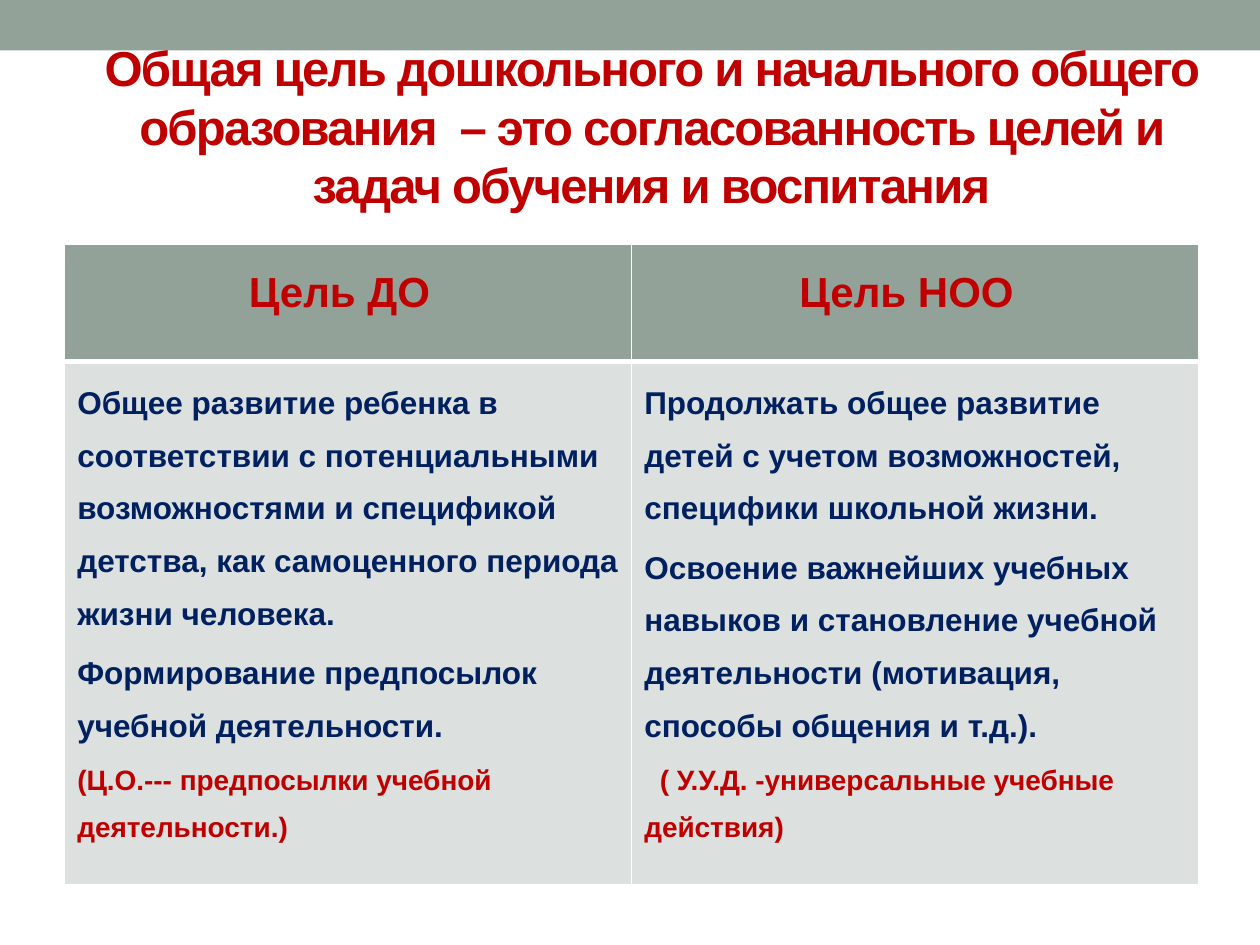
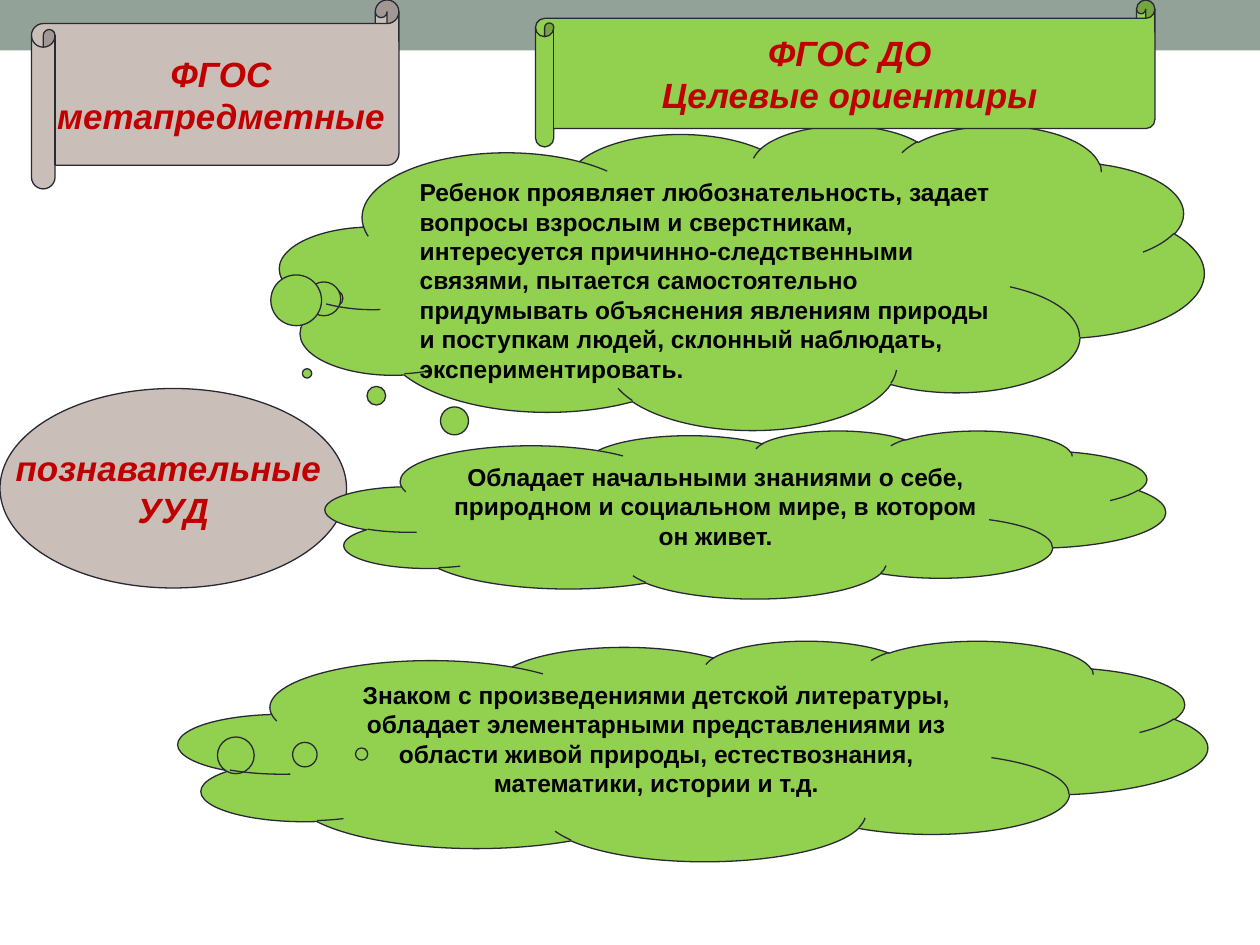
"""Build two slides on the goals of preschool and primary education."""
import lxml.etree
import pptx
import pptx.dml.color
import pptx.enum.shapes
import pptx.enum.text
import pptx.oxml.ns
import pptx.util

Pt = pptx.util.Pt
KIND = pptx.enum.shapes.MSO_SHAPE
ALIGN = pptx.enum.text.PP_ALIGN
ANCHOR = pptx.enum.text.MSO_ANCHOR
FONT = "Arial"
COLORS = {
    "sage": "93A299", "pale": "DCE0DE", "white": "FFFFFF", "red": "C00000",
    "navy": "002060", "lime": "92D050", "stone": "CABFB8", "ink": "292934",
    "black": "000000",
}

TITLE = ("Общая цель дошкольного и начального общего образования  – "
         "это согласованность целей и задач обучения и воспитания")
HEADS = ["Цель ДО", "Цель НОО"]
GOALS = [
    ["Общее развитие ребенка в соответствии с потенциальными возможностями "
     "и спецификой детства, как самоценного периода жизни человека.",
     "Формирование предпосылок учебной деятельности.",
     "(Ц.О.--- предпосылки учебной деятельности.)"],
    ["Продолжать общее развитие детей с учетом возможностей, специфики "
     "школьной жизни.",
     "Освоение важнейших учебных навыков и становление учебной деятельности "
     "(мотивация, способы общения и т.д.).",
     "  ( У.У.Д. -универсальные учебные действия)"],
]
CURIOUS = ("Ребенок проявляет любознательность, задает вопросы взрослым и "
           "сверстникам, интересуется причинно-следственными связями, пытается "
           "самостоятельно придумывать объяснения явлениям природы и поступкам "
           "людей, склонный наблюдать, экспериментировать.")
SELF = ("Обладает начальными знаниями о себе, природном и социальном мире, "
        "в котором он живет.")
BOOKS = ("Знаком с произведениями детской литературы, обладает элементарными "
         "представлениями из области живой природы, естествознания, "
         "математики, истории и т.д.")


def rgb(name):
    """Return the named colour."""
    return pptx.dml.color.RGBColor.from_string(COLORS[name])


def paint(thing, color):
    """Fill a shape or cell with a solid colour."""
    thing.fill.solid()
    thing.fill.fore_color.rgb = rgb(color)


def add_run(para, text, size, color, slant=False):
    """Add one bold run to a paragraph and return it."""
    run = para.add_run()
    run.text = text
    font = run.font
    font.name, font.size, font.bold, font.italic = FONT, Pt(size), True, slant
    font.color.rgb = rgb(color)
    return run


def add_para(frame, index, align):
    """Return the paragraph for an index, adding it after the first."""
    para = frame.add_paragraph() if index else frame.paragraphs[0]
    para.alignment = align
    return para


def add_form(slide, kind, box, color, line="ink", adjust=()):
    """Add a flat preset shape."""
    shape = slide.shapes.add_shape(kind, *map(Pt, box))
    shape.shadow.inherit = False
    paint(shape, color)
    if line:
        shape.line.color.rgb = rgb(line)
        shape.line.width = Pt(0.75)
    else:
        shape.line.fill.background()
    for index, value in enumerate(adjust):
        shape.adjustments[index] = value
    return shape


def add_cloud(slide, box, tip, text, align=ALIGN.CENTER):
    """Add a thought cloud with its tail aimed at tip."""
    cloud = add_form(slide, KIND.CLOUD_CALLOUT, box, "lime", adjust=tip)
    frame = cloud.text_frame
    frame.word_wrap = True
    frame.vertical_anchor = ANCHOR.TOP
    add_run(add_para(frame, 0, align), text, 14, "black")


def add_label(slide, kind, box, color, lines, adjust=()):
    """Add a shape with centred red italic lines."""
    frame = add_form(slide, kind, box, color, adjust=adjust).text_frame
    frame.word_wrap = False
    frame.vertical_anchor = ANCHOR.MIDDLE
    for index, text in enumerate(lines):
        add_run(add_para(frame, index, ALIGN.CENTER), text, 20, "red", True)


def add_title(slide, text):
    """Add the tightly spaced red title."""
    frame = slide.shapes.add_textbox(*map(Pt, (48.24, 49, 648, 77.8))).text_frame
    frame.word_wrap = True
    frame.vertical_anchor = ANCHOR.MIDDLE
    frame.margin_bottom = Pt(36)
    run = add_run(add_para(frame, 0, ALIGN.CENTER), text, 28, "red")
    run.font._element.set("spc", "-100")


def set_edges(cell, top, bottom):
    """Draw white cell borders with the given top and bottom widths."""
    props = cell._tc.get_or_add_tcPr()
    qn = pptx.oxml.ns.qn
    for side, width in zip("LRTB", (1, 1, top, bottom)):
        edge = lxml.etree.SubElement(props, qn(f"a:ln{side}"), w=str(Pt(width)))
        fill = lxml.etree.SubElement(edge, qn("a:solidFill"))
        lxml.etree.SubElement(fill, qn("a:srgbClr"), val=COLORS["white"])


def add_goals(slide):
    """Add the table that compares the two goals."""
    table = slide.shapes.add_table(2, 2, *map(Pt, (37, 139.7, 648, 366))).table
    for row, height in zip(table.rows, (67, 299)):
        row.height = Pt(height)
    for col, (head, goals) in enumerate(zip(HEADS, GOALS)):
        top, body = table.cell(0, col), table.cell(1, col)
        set_edges(top, 1, 3)
        set_edges(body, 3, 1)
        paint(top, "sage")
        paint(body, "pale")
        para = add_para(top.text_frame, 0, ALIGN.CENTER)
        add_run(para, head, 24, "red")
        add_run(para, " ", 36, "red")
        styles = [(18, "navy"), (18, "navy"), (16, "red")]
        for index, (text, (size, color)) in enumerate(zip(goals, styles)):
            para = add_para(body.text_frame, index, ALIGN.LEFT)
            para.line_spacing = 1.5
            if index:
                para.space_before = Pt(size * 0.2)
            add_run(para, text, size, color)


def add_page(deck):
    """Add a blank slide with the top band."""
    slide = deck.slides.add_slide(deck.slide_layouts[6])
    add_form(slide, KIND.RECTANGLE, (0, 0, 720, 28.8), "sage", None)
    return slide


def main():
    """Build and save the deck."""
    deck = pptx.Presentation()
    deck.slide_width, deck.slide_height = Pt(720), Pt(540)

    page = add_page(deck)
    add_goals(page)
    add_title(page, TITLE)

    page = add_page(deck)
    scroll = KIND.HORIZONTAL_SCROLL
    add_cloud(page, (102, 366, 588, 126), (-0.322, 0.015), BOOKS)
    add_cloud(page, (160, 71.5, 528, 174), (-0.441, 0.069), CURIOUS, ALIGN.LEFT)
    add_label(page, KIND.OVAL, (0, 222, 198, 114), "stone",
              ["познавательные ", "УУД"])
    add_label(page, scroll, (18, 0, 210, 108), "stone",
              ["ФГОС", "метапредметные"], [0.125])
    add_label(page, scroll, (306, 0, 354, 84), "lime",
              ["ФГОС ДО", "Целевые ориентиры"], [0.125])
    add_cloud(page, (186, 246, 480, 96), (-0.522, -0.84), SELF)
    deck.save("out.pptx")


if __name__ == "__main__":
    main()
